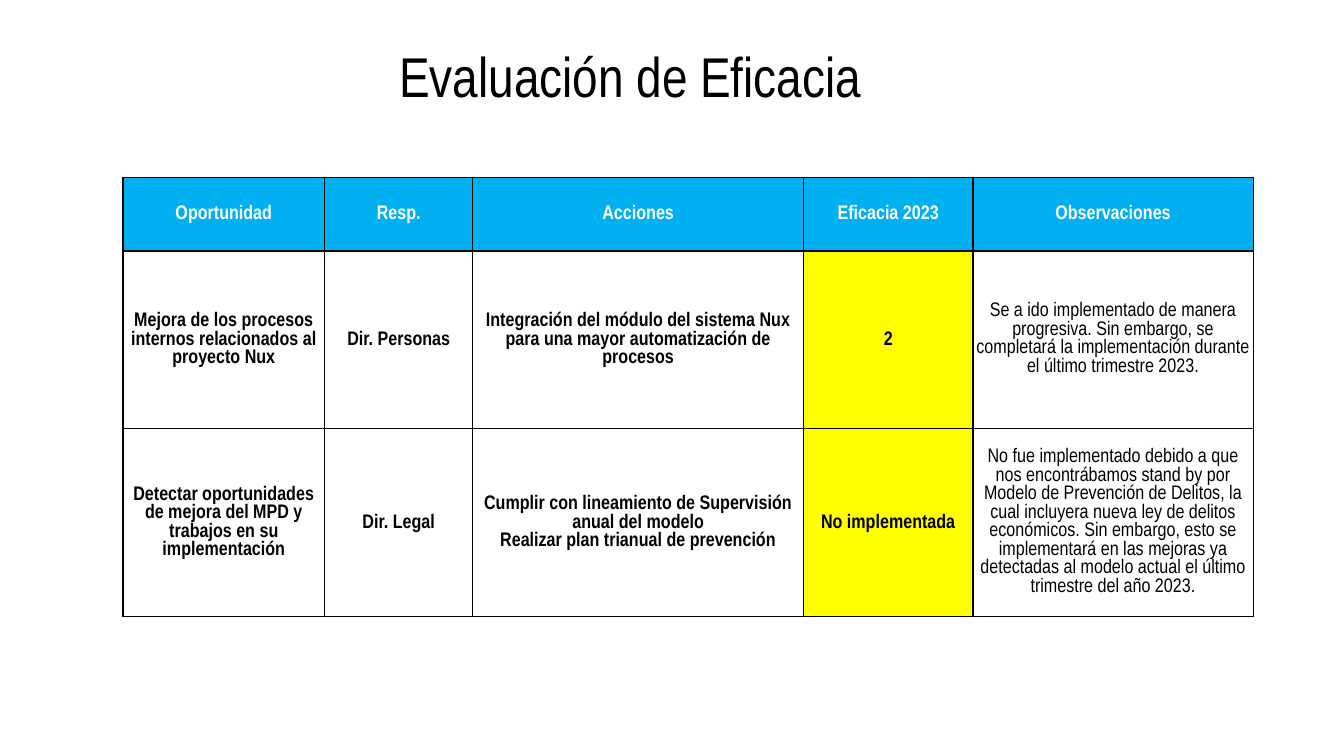
from lxml import etree
from pptx import Presentation
from pptx.dml.color import RGBColor
from pptx.enum import text
from pptx.oxml import ns
from pptx.util import Inches, Pt

BLACK = RGBColor(0, 0, 0)
WHITE = RGBColor(255, 255, 255)
BLUE = RGBColor(0x00, 0xB0, 0xF0)
YELLOW = RGBColor(255, 255, 0)
FONT = "Arial Narrow"

TITLE = "Evaluación de Eficacia"
HEADER = ["Oportunidad", "Resp.", "Acciones", "Eficacia 2023", "Observaciones"]
ROWS = [
    HEADER,
    [
        "Mejora de los procesos internos relacionados al proyecto Nux",
        "Dir. Personas",
        "Integración del módulo del sistema Nux para una mayor automatización de procesos",
        "2",
        "Se a ido implementado de manera progresiva. Sin embargo, se completará la "
        "implementación durante el último trimestre 2023.",
    ],
    [
        "Detectar oportunidades de mejora del MPD y trabajos en su implementación",
        "Dir. Legal",
        "Cumplir con lineamiento de Supervisión anual del modelo\n"
        "Realizar plan trianual de prevención",
        "No implementada",
        "No fue implementado debido a que nos encontrábamos stand by por Modelo de "
        "Prevención de Delitos, la cual incluyera nueva ley de delitos económicos. "
        "Sin embargo, esto se implementará en las mejoras ya detectadas al modelo "
        "actual el último trimestre del año 2023.",
    ],
]
COLUMN_WIDTHS = [2, 1.47, 3.28, 1.68, 2.78]
ROW_HEIGHTS = [0.73, 1.76, 1.87]
RATING_COLUMN = HEADER.index("Eficacia 2023")
NOTES_COLUMN = HEADER.index("Observaciones")


def add_borders(cell):
    properties = cell._tc.get_or_add_tcPr()
    for side in ("a:lnL", "a:lnR", "a:lnT", "a:lnB"):
        line = etree.SubElement(properties, ns.qn(side), w=str(Pt(1)))
        fill = etree.SubElement(line, ns.qn("a:solidFill"))
        etree.SubElement(fill, ns.qn("a:srgbClr"), val=str(BLACK))


def format_cell(cell, row, column):
    is_header = row == 0
    is_notes = column == NOTES_COLUMN
    add_borders(cell)
    cell.fill.solid()
    if is_header:
        cell.fill.fore_color.rgb = BLUE
    else:
        cell.fill.fore_color.rgb = YELLOW if column == RATING_COLUMN else WHITE
    side_margin = 0.01
    if is_notes:
        side_margin = 0.05 if is_header else 0
    cell.margin_left = cell.margin_right = Inches(side_margin)
    cell.margin_top = Inches(0 if is_notes else 0.01)
    cell.margin_bottom = 0
    cell.vertical_anchor = text.MSO_ANCHOR.MIDDLE
    for paragraph in cell.text_frame.paragraphs:
        paragraph.alignment = text.PP_ALIGN.CENTER
        paragraph.font.name = FONT
        paragraph.font.size = Pt(14)
        paragraph.font.bold = is_header or not is_notes
        paragraph.font.color.rgb = WHITE if is_header else BLACK


def add_title(slide):
    title = slide.shapes.title
    title.left, title.top = Inches(1.94), Inches(0.44)
    title.width, title.height = Inches(8.62), Inches(1.19)
    frame = title.text_frame
    frame.text = TITLE
    frame.word_wrap = True
    frame.auto_size = text.MSO_AUTO_SIZE.NONE
    frame.vertical_anchor = text.MSO_ANCHOR.TOP
    paragraph = frame.paragraphs[0]
    paragraph.alignment = text.PP_ALIGN.CENTER
    paragraph.line_spacing = 0.9
    paragraph.font.name = FONT
    paragraph.font.size = Pt(40)
    paragraph.font.color.rgb = BLACK


def add_evaluation_table(slide):
    table = slide.shapes.add_table(
        len(ROWS), len(HEADER), Inches(1.22), Inches(1.76),
        Inches(sum(COLUMN_WIDTHS)), Inches(sum(ROW_HEIGHTS)),
    ).table
    table.horz_banding = False
    for column, width in zip(table.columns, COLUMN_WIDTHS):
        column.width = Inches(width)
    for row, height in zip(table.rows, ROW_HEIGHTS):
        row.height = Inches(height)
    for row, values in enumerate(ROWS):
        for column, value in enumerate(values):
            cell = table.cell(row, column)
            cell.text = value
            format_cell(cell, row, column)


def main():
    presentation = Presentation()
    presentation.slide_width = Inches(13.33)
    presentation.slide_height = Inches(7.5)
    slide = presentation.slides.add_slide(presentation.slide_layouts.get_by_name("Title Only"))
    add_title(slide)
    add_evaluation_table(slide)
    presentation.save("out.pptx")


if __name__ == "__main__":
    main()
